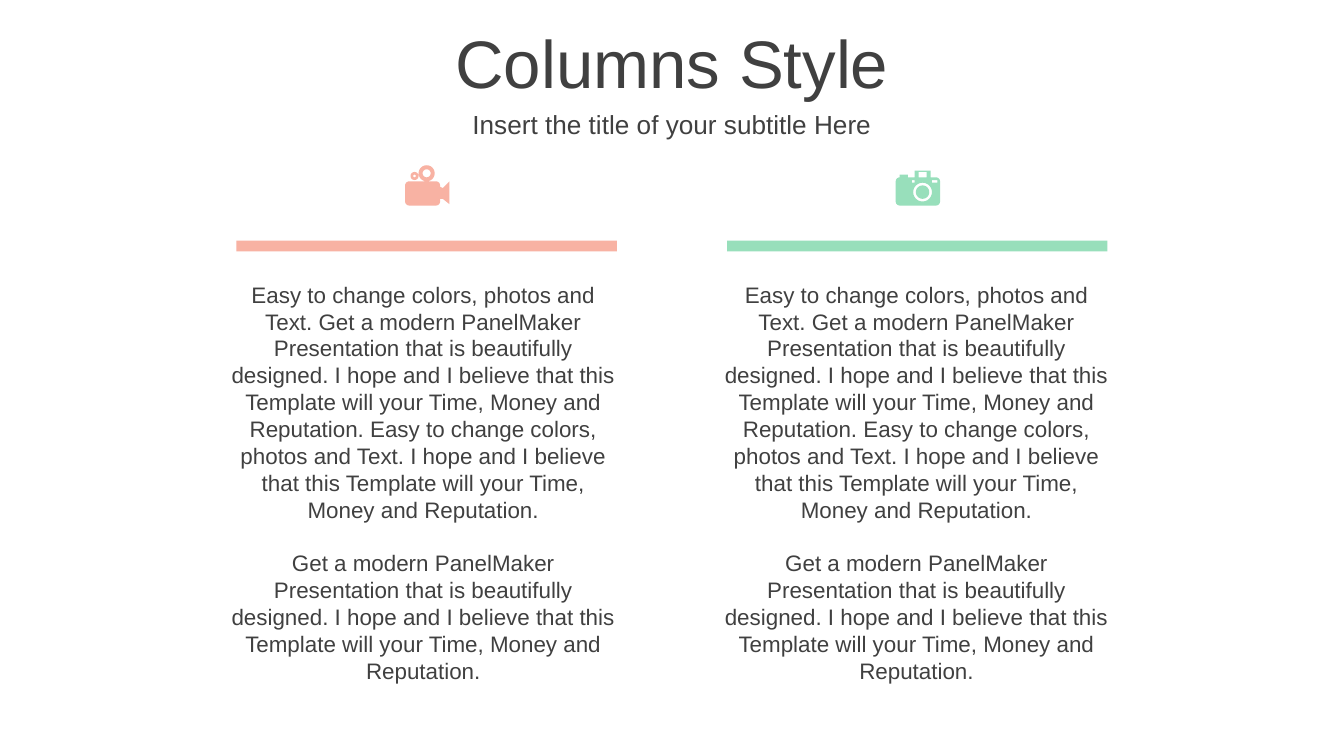
import math

from pptx import Presentation
from pptx import util as u
from pptx.dml.color import RGBColor
from pptx.enum import shapes, text

COLORS = {"text": "404040", "coral": "F8B2A3", "mint": "98DFBB"}
TITLE = "Columns Style"
SUBTITLE = "Insert the title of your subtitle Here"
PARAGRAPHS = [
    "Easy to change colors, photos and Text. Get a modern PanelMaker Presentation "
    "that is beautifully designed. I hope and I believe that this Template will "
    "your Time, Money and Reputation. Easy to change colors, photos and Text. "
    "I hope and I believe that this Template will your Time, Money and Reputation.",
    "Get a modern PanelMaker Presentation that is beautifully designed. I hope and "
    "I believe that this Template will your Time, Money and Reputation.",
]
SLIDE_WIDTH = u.Inches(10)
SLIDE_HEIGHT = SLIDE_WIDTH * 9 // 16
BAR_WIDTH, BAR_HEIGHT, BAR_TOP = 2.83, 0.08, 1.79
TEXT_TOP, TEXT_WIDTH, TEXT_HEIGHT = 2.04, 3.1, 3.13


def box(left, top, right, bottom, radius=0):
    """Return the outline of a rectangle, with rounded corners if radius is set."""
    if not radius:
        return [(left, top), (right, top), (right, bottom), (left, bottom)]
    corners = [(right - radius, bottom - radius), (left + radius, bottom - radius),
               (left + radius, top + radius), (right - radius, top + radius)]
    return [(x + radius * math.cos(math.radians(angle)),
             y + radius * math.sin(math.radians(angle)))
            for quarter, (x, y) in enumerate(corners)
            for angle in range(quarter * 90, quarter * 90 + 91, 15)]


def circle(x, y, radius):
    return box(x - radius, y - radius, x + radius, y + radius, radius)


# Icon outlines: x runs from the column centre, y from the slide top.
FILM_CAMERA = [
    box(-0.16, 1.35, 0.1, 1.53, 0.03),
    [(0.1, 1.39), (0.12, 1.4), (0.17, 1.35), (0.17, 1.52), (0.12, 1.48), (0.1, 1.48)],
    circle(0, 1.29, 0.06), circle(0, 1.29, 0.03),
    circle(-0.09, 1.31, 0.03), circle(-0.09, 1.31, 0.01),
]
PHOTO_CAMERA = [
    box(-0.16, 1.32, 0.17, 1.53, 0.03),
    circle(0.04, 1.43, 0.07), circle(0.04, 1.43, 0.05),
    box(-0.04, 1.34, -0.02, 1.36), box(0.11, 1.34, 0.15, 1.36),
    box(-0.02, 1.27, 0.1, 1.32), box(0.01, 1.28, 0.07, 1.32),
    box(-0.13, 1.3, -0.07, 1.32),
]
# Bar left, text left, colour, icon
COLUMNS = [
    (1.76, 1.6, "coral", FILM_CAMERA),
    (5.41, 5.27, "mint", PHOTO_CAMERA),
]


def place(shape, left, top, width, height):
    shape.left, shape.top = u.Inches(left), u.Inches(top)
    shape.width, shape.height = u.Inches(width), u.Inches(height)


def write(shape, paragraphs, size, anchor=text.MSO_ANCHOR.TOP,
          before=0, after=0, line=None):
    frame = shape.text_frame
    frame.word_wrap = True
    frame.auto_size = text.MSO_AUTO_SIZE.NONE
    frame.vertical_anchor = anchor
    for index, words in enumerate(paragraphs):
        paragraph = frame.add_paragraph() if index else frame.paragraphs[0]
        paragraph.alignment = text.PP_ALIGN.CENTER
        paragraph.space_before, paragraph.space_after = u.Pt(before), u.Pt(after)
        if line:
            paragraph.line_spacing = u.Pt(line)
        run = paragraph.add_run()
        run.text = words
        run.font.name, run.font.size = "Arial", u.Pt(size)
        run.font.color.rgb = RGBColor.from_string(COLORS["text"])


def paint(shape, color):
    shape.shadow.inherit = False
    shape.fill.solid()
    shape.fill.fore_color.rgb = RGBColor.from_string(COLORS[color])
    shape.line.fill.background()


def add_icon(slide, outlines, center, color):
    """Draw all outlines as one freeform, where inner outlines become holes."""
    builder = None
    for outline in outlines:
        points = [(u.Inches(center + x), u.Inches(y)) for x, y in outline]
        if builder is None:
            builder = slide.shapes.build_freeform(*points[0])
        else:
            builder.move_to(*points[0])
        builder.add_line_segments(points[1:], close=True)
    paint(builder.convert_to_shape(), color)


def main():
    presentation = Presentation()
    presentation.slide_width, presentation.slide_height = SLIDE_WIDTH, SLIDE_HEIGHT
    slide = presentation.slides.add_slide(presentation.slide_layouts[0])

    title, subtitle = slide.placeholders
    place(title, 0, 0.14, 10, 0.63)
    write(title, [TITLE], 36, text.MSO_ANCHOR.MIDDLE, before=6)
    place(subtitle, 0, 0.77, 10, 0.31)
    write(subtitle, [SUBTITLE], 14, text.MSO_ANCHOR.MIDDLE, before=2.8)

    for bar_left, text_left, color, icon in COLUMNS:
        bar = slide.shapes.add_shape(shapes.MSO_SHAPE.RECTANGLE, 0, 0, 0, 0)
        place(bar, bar_left, BAR_TOP, BAR_WIDTH, BAR_HEIGHT)
        paint(bar, color)
        add_icon(slide, icon, bar_left + BAR_WIDTH / 2, color)
        description = slide.shapes.add_textbox(0, 0, 0, 0)
        place(description, text_left, TEXT_TOP, TEXT_WIDTH, TEXT_HEIGHT)
        write(description, PARAGRAPHS, 12, after=14.4, line=14.4)

    presentation.save("out.pptx")


if __name__ == "__main__":
    main()
